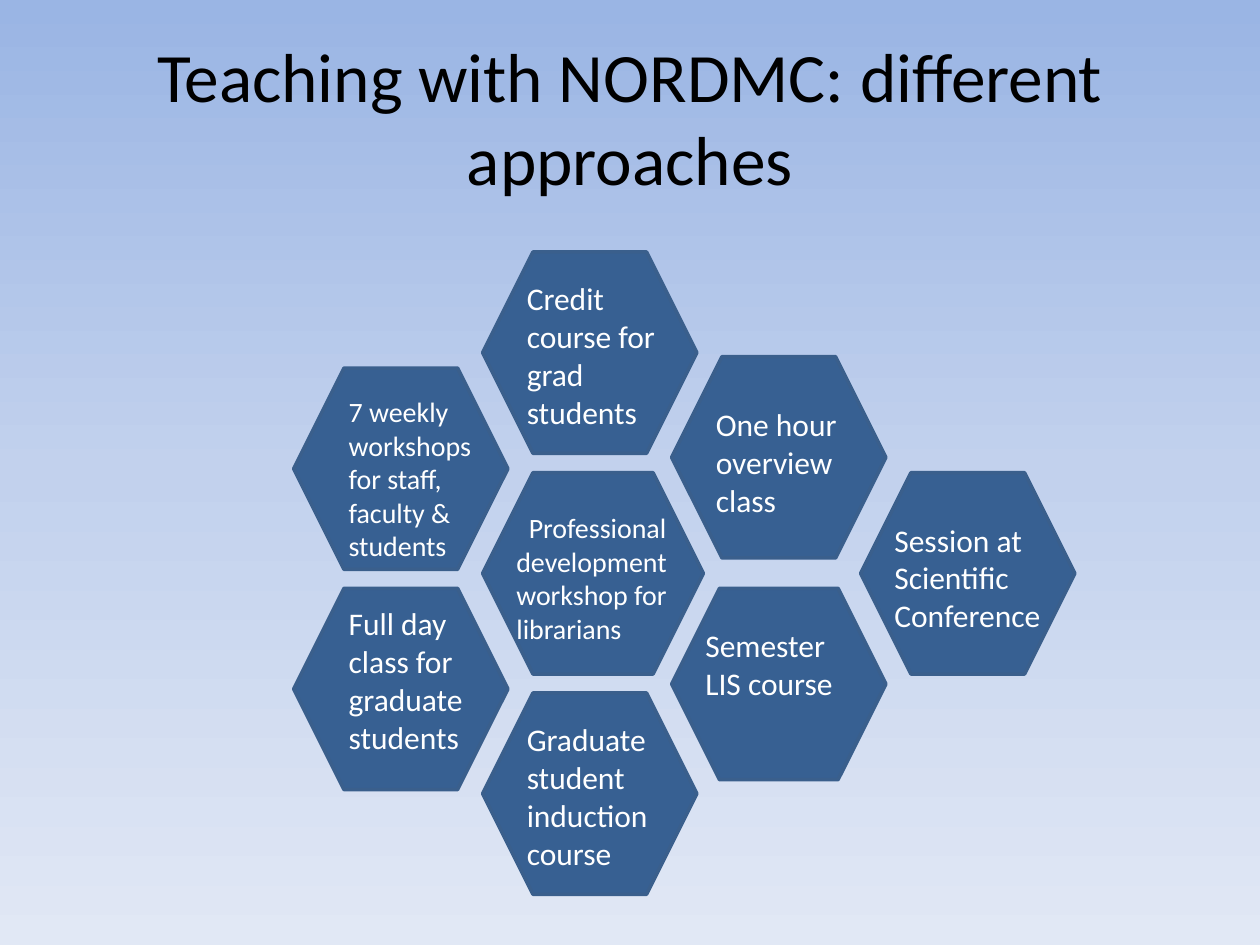
from copy import deepcopy
from pptx import Presentation
from pptx.dml.color import RGBColor
from pptx.enum.shapes import MSO_SHAPE
from pptx.enum.text import MSO_ANCHOR, MSO_AUTO_SIZE, PP_ALIGN
from pptx.util import Cm, Pt

BACKGROUND_STOPS = [(0, "9AB5E4"), (0.5, "C2D1ED"), (1, "E1E8F5")]
COMB_LEFT, COLUMN_STEP = 5.92, 3.81
CELL_WIDTH, CELL_HEIGHT = 4.32, 4.06

# column, top, label, label box (left, top, width) inside the cell, further format
APPROACHES = [
    (0, 7.42, "7 weekly workshops for staff, faculty & students",
     (0.86, 0.41, 3.38), {"size": 16}),
    (0, 11.86, "Full day class for graduate students", (0.86, 0.2, 3.38), {}),
    (1, 5.08, "Credit course for grad students", (0.64, 0.43, 3.18), {}),
    (1, 9.53, "Professional development workshop for librarians",
     (0.43, 0.64, 3.81), {"size": 16, "indent": 0.25}),
    (1, 13.97, "Graduate student induction course", (0.64, 0.43, 3.18), {}),
    (2, 7.19, "One hour overview class", (0.64, 0.86, 2.97), {}),
    (2, 11.86, "Semester LIS course", (0.43, 0.64, 3.38), {}),
    (3, 9.53, "Session at Scientific Conference", (0.43, 0.84, 3.81), {}),
]
# Cells that differ from the common size, by column and top
CELL_SIZES = {(1, 9.53): (4.45, 4.06), (2, 11.86): (4.32, 3.86)}


def color(hex_string):
    return RGBColor.from_string(hex_string)


def write(frame, text, size=18, fill="FFFFFF", align=PP_ALIGN.LEFT,
          anchor=MSO_ANCHOR.TOP, indent=0):
    frame.word_wrap = True
    frame.auto_size = MSO_AUTO_SIZE.NONE
    frame.vertical_anchor = anchor
    paragraph = frame.paragraphs[0]
    paragraph.alignment = align
    if indent:
        properties = paragraph._p.get_or_add_pPr()
        properties.set("marL", "0")
        properties.set("indent", str(Cm(indent)))
    run = paragraph.add_run()
    run.text = text
    run.font.name = "Calibri"
    run.font.size = Pt(size)
    run.font.color.rgb = color(fill)


def paint_background(slide):
    fill = slide.background.fill
    fill.gradient()
    fill.gradient_angle = 270
    first = fill.gradient_stops[0]._gs
    first.addnext(deepcopy(first))
    for stop, (position, shade) in zip(fill.gradient_stops, BACKGROUND_STOPS):
        stop.position = position
        stop.color.rgb = color(shade)


def place_title(slide, left, top, width, height):
    title = slide.shapes.title
    title.left, title.top = Cm(left), Cm(top)
    title.width, title.height = Cm(width), Cm(height)
    write(title.text_frame, "Teaching with NORDMC: different approaches",
          size=39.6, fill="000000", align=PP_ALIGN.CENTER,
          anchor=MSO_ANCHOR.MIDDLE)


def draw_cell(slide, left, top, width, height):
    cell = slide.shapes.add_shape(
        MSO_SHAPE.HEXAGON, Cm(left), Cm(top), Cm(width), Cm(height))
    cell.shadow.inherit = False
    cell.fill.solid()
    cell.fill.fore_color.rgb = color("376092")
    cell.line.color.rgb = color("3A5F8C")
    cell.line.width = Pt(2)


def draw_label(slide, left, top, width, height, text, **text_format):
    label = slide.shapes.add_textbox(Cm(left), Cm(top), Cm(width), Cm(height))
    write(label.text_frame, text, **text_format)


def draw_honeycomb(slide, left):
    for column, top, text, (dx, dy, width), text_format in APPROACHES:
        cell_left = left + column * COLUMN_STEP
        size = CELL_SIZES.get((column, top), (CELL_WIDTH, CELL_HEIGHT))
        draw_cell(slide, cell_left, top, *size)
        draw_label(slide, cell_left + dx, top + dy, width, size[1] - 2 * dy,
                   text, **text_format)


def main():
    deck = Presentation()
    deck.slide_width, deck.slide_height = Cm(25.4), Cm(19.05)
    slide = deck.slides.add_slide(deck.slide_layouts[5])
    paint_background(slide)
    place_title(slide, 1.27, 0.76, 22.86, 3.18)
    draw_honeycomb(slide, COMB_LEFT)
    deck.save("out.pptx")


if __name__ == "__main__":
    main()
